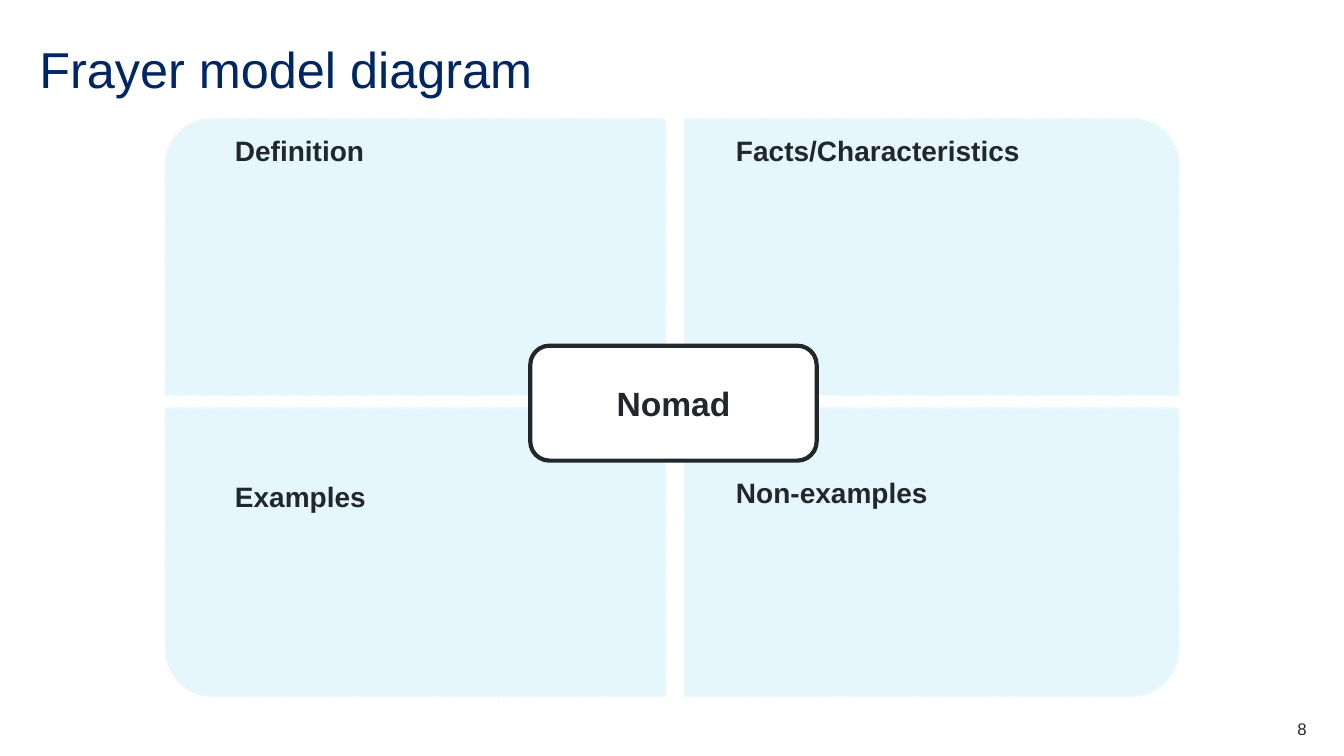
from pptx import Presentation
from pptx.dml.color import RGBColor
from pptx.enum.dml import MSO_LINE
from pptx.enum.shapes import MSO_SHAPE
from pptx.enum.text import MSO_ANCHOR, PP_ALIGN
from pptx.util import Inches, Pt

ROUND_ONE, ROUND_ALL = MSO_SHAPE.ROUND_1_RECTANGLE, MSO_SHAPE.ROUNDED_RECTANGLE
TOP, MIDDLE, BOTTOM = MSO_ANCHOR.TOP, MSO_ANCHOR.MIDDLE, MSO_ANCHOR.BOTTOM
LEFT, CENTER, RIGHT = PP_ALIGN.LEFT, PP_ALIGN.CENTER, PP_ALIGN.RIGHT
DOTTED = MSO_LINE.ROUND_DOT

NAVY, INK, PALE, WHITE = "002664", "22272B", "E5F7FC", "FFFFFF"
CORNER = 0.167

# Left and width of each column, top and height of each row, in inches
COLUMNS = [(1.63, 4.98), (6.78, 4.92)]
ROWS = [(1.17, 2.76), (4.04, 2.88)]
COLUMN_INSETS = [0.7, 0.52]
LABEL_OFFSETS = [0.19, 0.72]

# Label, column, row, turn of the rounded corner, line spacing
QUADRANTS = [
    ("Definition", 0, 0, 270, 0.9),
    ("Facts/Characteristics", 1, 0, 0, 0.9),
    ("Examples", 0, 1, 180, 1.0),
    ("Non-examples", 1, 1, 90, 0.9),
]


def color(hex_string):
    return RGBColor.from_string(hex_string)


def apply(target, values):
    for name, value in values.items():
        setattr(target, name, value)


def add_text(slide, box, text, size, ink=INK, bold=False, align=LEFT,
             anchor=TOP, spacing=1.0):
    text_box = slide.shapes.add_textbox(*map(Inches, box))
    frame = text_box.text_frame
    apply(frame, {"word_wrap": True, "vertical_anchor": anchor,
                  "margin_left": 0, "margin_top": 0,
                  "margin_right": 0, "margin_bottom": 0})
    paragraph = frame.paragraphs[0]
    apply(paragraph, {"alignment": align, "line_spacing": spacing})
    run = paragraph.add_run()
    run.text = text
    apply(run.font, {"name": "Arial", "size": Pt(size), "bold": bold})
    run.font.color.rgb = color(ink)


def add_panel(slide, kind, box, fill, line, width, turn=0, dash=None):
    """Fill the box with a panel; quarter turns keep the visible box unchanged."""
    left, top, wide, high = box
    if turn % 180:
        left, top = left + (wide - high) / 2, top + (high - wide) / 2
        wide, high = high, wide
    shape = slide.shapes.add_shape(kind, *map(Inches, (left, top, wide, high)))
    shape.adjustments[0] = CORNER
    shape.rotation = turn
    shape.shadow.inherit = False
    shape.fill.solid()
    shape.fill.fore_color.rgb = color(fill)
    shape.line.color.rgb = color(line)
    apply(shape.line, {"width": Pt(width), "dash_style": dash})


def add_quadrant(slide, label, column, row, turn, spacing):
    (left, width), (top, height) = COLUMNS[column], ROWS[row]
    add_panel(slide, ROUND_ONE, (left, top, width, height), PALE, WHITE, 1.5,
              turn, DOTTED)
    inset, offset = COLUMN_INSETS[column], LABEL_OFFSETS[row]
    add_text(slide, (left + inset, top + offset, width - inset, height - offset),
             label, 20, bold=True, spacing=spacing)


def add_term(slide, box, term):
    add_panel(slide, ROUND_ALL, box, WHITE, INK, 3)
    add_text(slide, box, term, 24, bold=True, align=CENTER, anchor=MIDDLE)


def build_frayer_slide(presentation):
    slide = presentation.slides.add_slide(presentation.slide_layouts[6])
    add_text(slide, (0.39, 0.39, 12.56, 0.6), "Frayer model diagram", 36,
             ink=NAVY, anchor=BOTTOM, spacing=0.9)
    for quadrant in QUADRANTS:
        add_quadrant(slide, *quadrant)
    add_term(slide, (5.26, 3.43, 2.84, 1.14), "Nomad")
    add_text(slide, (12.17, 7.13, 0.79, 0.2), "8", 12, align=RIGHT, anchor=BOTTOM)


def main():
    presentation = Presentation()
    apply(presentation, {"slide_width": Inches(13.33), "slide_height": Inches(7.5)})
    build_frayer_slide(presentation)
    presentation.save("out.pptx")


if __name__ == "__main__":
    main()
